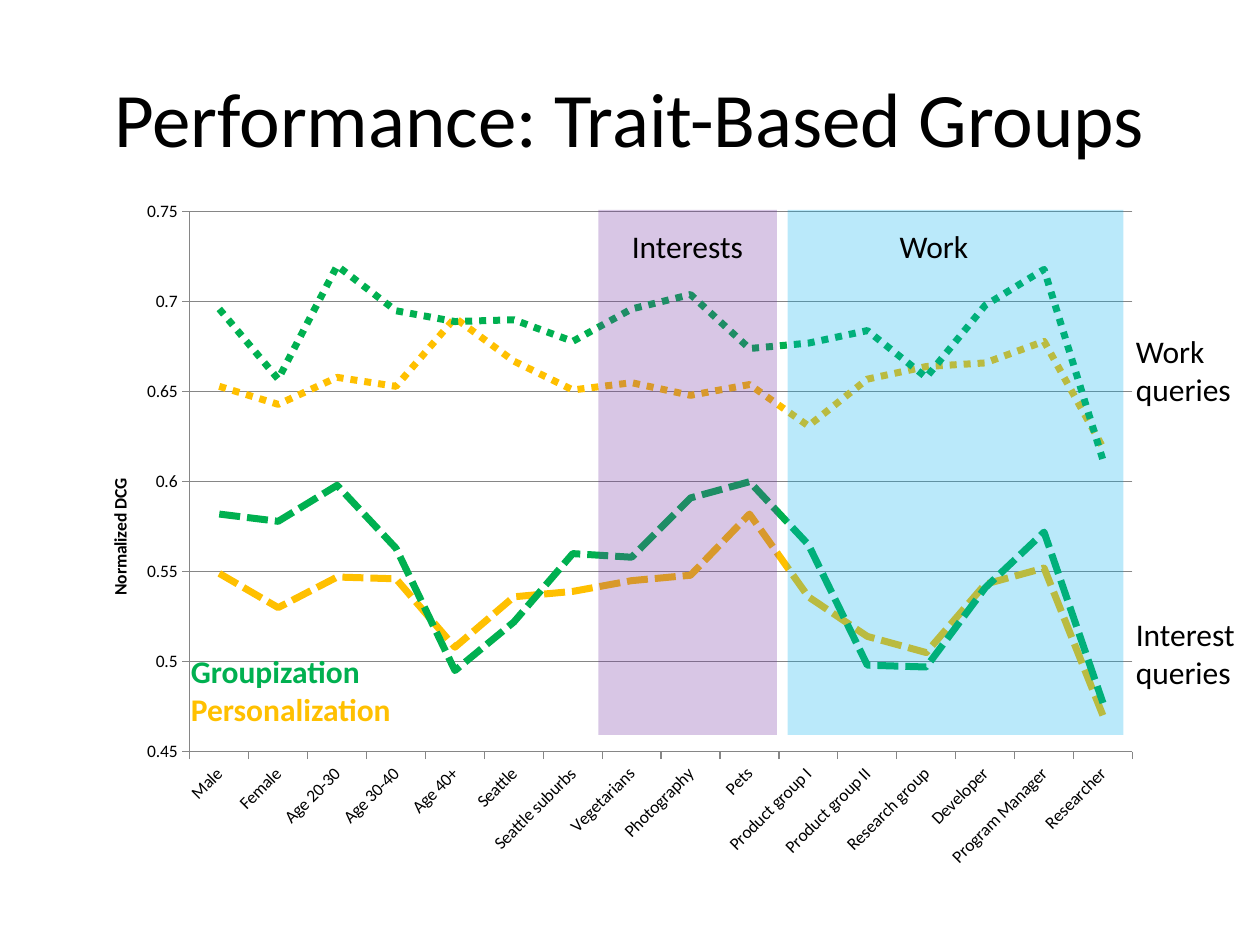
from dataclasses import dataclass

from lxml.etree import SubElement
from pptx import Presentation
from pptx.chart.data import CategoryChartData
from pptx.dml.color import RGBColor
from pptx.enum.chart import XL_CHART_TYPE as ChartType, XL_TICK_MARK as Tick
from pptx.enum.dml import MSO_LINE as Dash
from pptx.enum.shapes import MSO_SHAPE as Preset
from pptx.enum.text import MSO_ANCHOR as Anchor, PP_ALIGN as Align
from pptx.oxml import parse_xml
from pptx.oxml.ns import nsdecls, qn
from pptx.util import Pt


@dataclass(frozen=True)
class Theme:
    font: str = "Calibri"
    ink: str = "000000"
    grid: str = "868686"
    groupization: str = "00B050"
    personalization: str = "FFC000"
    work: str = "00B0F0"
    interests: str = "7030A0"
    title_size: float = 44
    label_size: float = 18
    chart_size: float = 10


THEME = Theme()


@dataclass(frozen=True)
class Box:
    left: float
    top: float
    width: float
    height: float

    def emu(self) -> tuple:
        return Pt(self.left), Pt(self.top), Pt(self.width), Pt(self.height)


@dataclass(frozen=True)
class Label:
    box: Box
    lines: tuple  # (text, colour) pairs
    size: float = THEME.label_size
    bold: bool = False
    align: Align = Align.LEFT
    anchor: Anchor = Anchor.TOP


@dataclass(frozen=True)
class Band:
    box: Box
    color: str
    opacity: int = 27


@dataclass(frozen=True)
class Curve:
    name: str
    color: str
    dash: Dash
    values: tuple


CHART_BOX = Box(41.76, 108, 617.76, 396)
TRAITS = (
    "Male", "Female", "Age 20-30", "Age 30-40", "Age 40+", "Seattle",
    "Seattle suburbs", "Vegetarians", "Photography", "Pets",
    "Product group I", "Product group II", "Research group", "Developer",
    "Program Manager", "Researcher",
)
CURVES = (
    Curve("Series 1", THEME.personalization, Dash.SQUARE_DOT,
          (0.549, 0.53, 0.547, 0.546, 0.508, 0.536, 0.539, 0.545,
           0.548, 0.582, 0.536, 0.514, 0.505, 0.543, 0.552, 0.47)),
    Curve("Series 2", THEME.personalization, Dash.ROUND_DOT,
          (0.653, 0.643, 0.658, 0.653, 0.691, 0.667, 0.651, 0.655,
           0.648, 0.654, 0.631, 0.657, 0.664, 0.666, 0.678, 0.619)),
    Curve("Series 3", THEME.groupization, Dash.SQUARE_DOT,
          (0.582, 0.578, 0.598, 0.563, 0.495, 0.522, 0.56, 0.558,
           0.591, 0.6, 0.565, 0.498, 0.497, 0.541, 0.572, 0.477)),
    Curve("Series 4", THEME.groupization, Dash.ROUND_DOT,
          (0.696, 0.657, 0.72, 0.695, 0.689, 0.69, 0.678, 0.696,
           0.704, 0.674, 0.677, 0.684, 0.658, 0.698, 0.718, 0.612)),
)
TITLE = Label(Box(36, 21.6, 648, 90),
              (("Performance: Trait-Based Groups", THEME.ink),),
              size=THEME.title_size, align=Align.CENTER, anchor=Anchor.MIDDLE)
ROW_LABELS = (
    Label(Box(102, 369, 144, 51),
          (("Groupization", THEME.groupization),
           ("Personalization", THEME.personalization)), bold=True),
    Label(Box(642, 186, 84, 51), (("Work", THEME.ink), ("queries", THEME.ink))),
    Label(Box(642, 348, 72, 51), (("Interest queries", THEME.ink),)),
)
BANDS = (
    Band(Box(450, 120, 192, 300), THEME.work),
    Band(Box(342, 120, 102, 300), THEME.interests),
)
BAND_LABELS = (
    Label(Box(354, 126, 78, 29), (("Interests", THEME.ink),)),
    Label(Box(507, 126, 78, 29), (("Work", THEME.ink),)),
)


def rgb(color: str) -> RGBColor:
    return RGBColor.from_string(color)


def style_font(font, size: float, color: str, bold: bool = False) -> None:
    font.name, font.size, font.bold = THEME.font, Pt(size), bold
    font.color.rgb = rgb(color)


def draw_label(slide, label: Label) -> None:
    frame = slide.shapes.add_textbox(*label.box.emu()).text_frame
    frame.word_wrap = True
    frame.vertical_anchor = label.anchor
    for index, (text, color) in enumerate(label.lines):
        line = frame.add_paragraph() if index else frame.paragraphs[0]
        line.alignment = label.align
        run = line.add_run()
        run.text = text
        style_font(run.font, label.size, color, label.bold)


def draw_band(slide, band: Band) -> None:
    rect = slide.shapes.add_shape(Preset.RECTANGLE, *band.box.emu())
    rect.shadow.inherit = False
    rect.line.fill.background()
    rect.fill.solid()
    rect.fill.fore_color.rgb = rgb(band.color)
    color = rect.fill._xPr.find(".//" + qn("a:srgbClr"))
    SubElement(color, qn("a:alpha"), val=str(band.opacity * 1000))


def layout_xml(inner: bool = False, **fractions: float):
    target = '<c:layoutTarget val="inner"/>' if inner else ""
    modes = "".join(f'<c:{axis}Mode val="edge"/>' for axis in "xy")
    places = "".join(f'<c:{key} val="{value}"/>' for key, value in fractions.items())
    return parse_xml(f'<c:layout {nsdecls("c")}><c:manualLayout>{target}{modes}'
                     f"{places}</c:manualLayout></c:layout>")


def place(parent, index: int, layout) -> None:
    for old in parent.findall(qn("c:layout")):
        parent.remove(old)
    parent.insert(index, layout)


def draw_chart(slide) -> None:
    data = CategoryChartData()
    data.categories = TRAITS
    for curve in CURVES:
        data.add_series(curve.name, curve.values)
    chart = slide.shapes.add_chart(ChartType.LINE, *CHART_BOX.emu(), data).chart
    chart.has_legend = chart.has_title = False
    style_font(chart.font, THEME.chart_size, THEME.ink)
    plot_area = chart._chartSpace.chart.plotArea
    place(plot_area, 0, layout_xml(True, x=0.108, y=0.033, w=0.872, h=0.779))

    # Curves
    chart.plots[0].vary_by_categories = False
    for series, curve in zip(chart.plots[0].series, CURVES):
        series.smooth = False
        line = series.format.line
        line.width, line.dash_style = Pt(4), curve.dash
        line.color.rgb = rgb(curve.color)

    # Axes
    traits, dcg = chart.category_axis, chart.value_axis
    dcg.minimum_scale, dcg.maximum_scale, dcg.major_unit = 0.45, 0.75, 0.05
    dcg.has_major_gridlines = True
    for axis in (traits, dcg):
        axis.major_tick_mark = Tick.OUTSIDE
        style_font(axis.tick_labels.font, THEME.chart_size, THEME.ink)
    for line in (traits.format.line, dcg.format.line, dcg.major_gridlines.format.line):
        line.width = Pt(0.75)
        line.color.rgb = rgb(THEME.grid)
    traits._element.find(qn("c:txPr")).find(qn("a:bodyPr")).set("rot", "-2700000")

    # Value axis title
    heading = dcg.axis_title
    run = heading.text_frame.paragraphs[0].add_run()
    run.text = "Normalized DCG"
    style_font(run.font, THEME.chart_size, THEME.ink, bold=True)
    heading._element.find(".//" + qn("a:bodyPr")).set("rot", "-5400000")
    place(heading._element, 1, layout_xml(x=0.03, y=0.414))


def main() -> None:
    deck = Presentation()
    deck.slide_width, deck.slide_height = Pt(720), Pt(540)
    slide = deck.slides.add_slide(deck.slide_layouts[6])
    draw_label(slide, TITLE)
    draw_chart(slide)
    for label in ROW_LABELS:
        draw_label(slide, label)
    for band in BANDS:
        draw_band(slide, band)
    for label in BAND_LABELS:
        draw_label(slide, label)
    deck.save("out.pptx")


if __name__ == "__main__":
    main()
